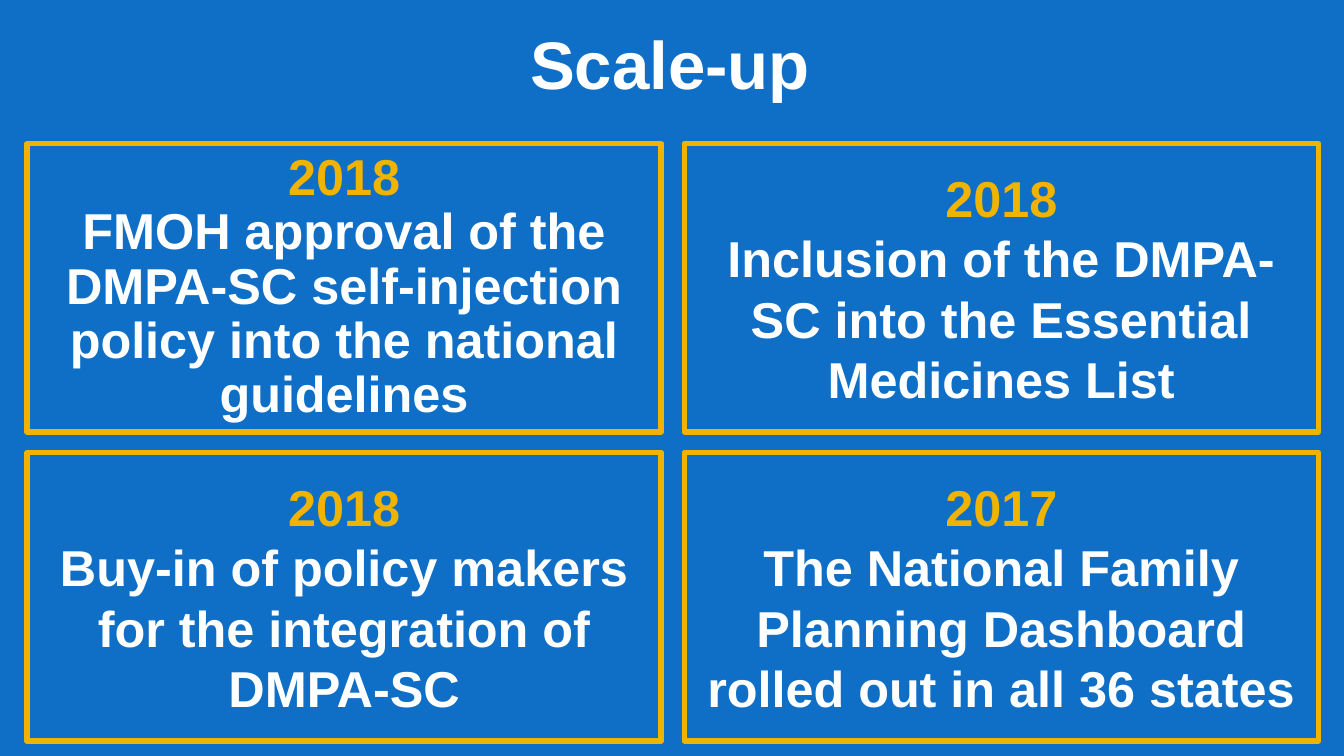
import pptx
import pptx.util
import pptx.dml.color
import pptx.enum.shapes
import pptx.enum.text

Pt = pptx.util.Pt
ALIGN = pptx.enum.text.PP_ALIGN
ANCHOR = pptx.enum.text.MSO_ANCHOR
AUTO_SIZE = pptx.enum.text.MSO_AUTO_SIZE

BLUE = "0F6FC6"
GOLD = "F0B300"
WHITE = "FFFFFF"


def rgb(value):
    return pptx.dml.color.RGBColor.from_string(value)


def style(target, formats):
    for name, value in formats.items():
        setattr(target, name, value)


class Deck:
    font = {"name": "Arial", "bold": True}

    def __init__(self, width, height):
        self.prs = pptx.Presentation()
        style(self.prs, {"slide_width": Pt(width), "slide_height": Pt(height)})

    def slide(self, background):
        self.s = self.prs.slides.add_slide(self.prs.slide_layouts[6])
        fill = self.s.background.fill
        fill.solid()
        fill.fore_color.rgb = rgb(background)

    def text(self, p, text, size, color, **formats):
        style(p, formats)
        r = p.add_run()
        r.text = text
        style(r.font, {**self.font, "size": Pt(size)})
        r.font.color.rgb = rgb(color)

    def title(self, text, x, y, w, h):
        tf = self.s.shapes.add_textbox(Pt(x), Pt(y), Pt(w), Pt(h)).text_frame
        style(tf, {"word_wrap": True, "auto_size": AUTO_SIZE.SHAPE_TO_FIT_TEXT})
        self.text(tf.paragraphs[0], text, 48, WHITE)

    def card(self, year, text, x, y, w, h, spacing):
        sp = self.s.shapes.add_shape(
            pptx.enum.shapes.MSO_SHAPE.RECTANGLE, Pt(x), Pt(y), Pt(w), Pt(h))
        sp.shadow.inherit = False
        sp.fill.solid()
        sp.fill.fore_color.rgb = rgb(BLUE)
        sp.line.color.rgb = rgb(GOLD)
        sp.line.width = Pt(4)
        tf = sp.text_frame
        style(tf, {"word_wrap": True, "vertical_anchor": ANCHOR.MIDDLE})
        formats = {"alignment": ALIGN.CENTER, "line_spacing": spacing}
        self.text(tf.paragraphs[0], year, 36, GOLD, **formats)
        self.text(tf.add_paragraph(), text, 36, WHITE, **formats)


MILESTONES = [
    ("2018", "FMOH approval of the DMPA-SC self-injection policy into the "
     "national guidelines", 0.9),
    ("2018", "Inclusion of the DMPA-SC into the Essential Medicines List", None),
    ("2018", "Buy-in of policy makers for the integration of DMPA-SC", None),
    ("2017", "The National Family Planning Dashboard rolled out in all 36 states",
     None),
]


def main():
    deck = Deck(960, 540)
    deck.slide(BLUE)
    deck.title("Scale-up", 371.5, 12.2, 216.7, 65.5)
    left, top, width, height = 19.4, 102.6, 452.9, 205.9
    column_step, row_step = 469.4, 220.7
    for i, (year, text, spacing) in enumerate(MILESTONES):
        row, column = divmod(i, 2)
        deck.card(year, text, left + column * column_step, top + row * row_step,
                  width, height, spacing)
    deck.prs.save("out.pptx")


if __name__ == "__main__":
    main()
